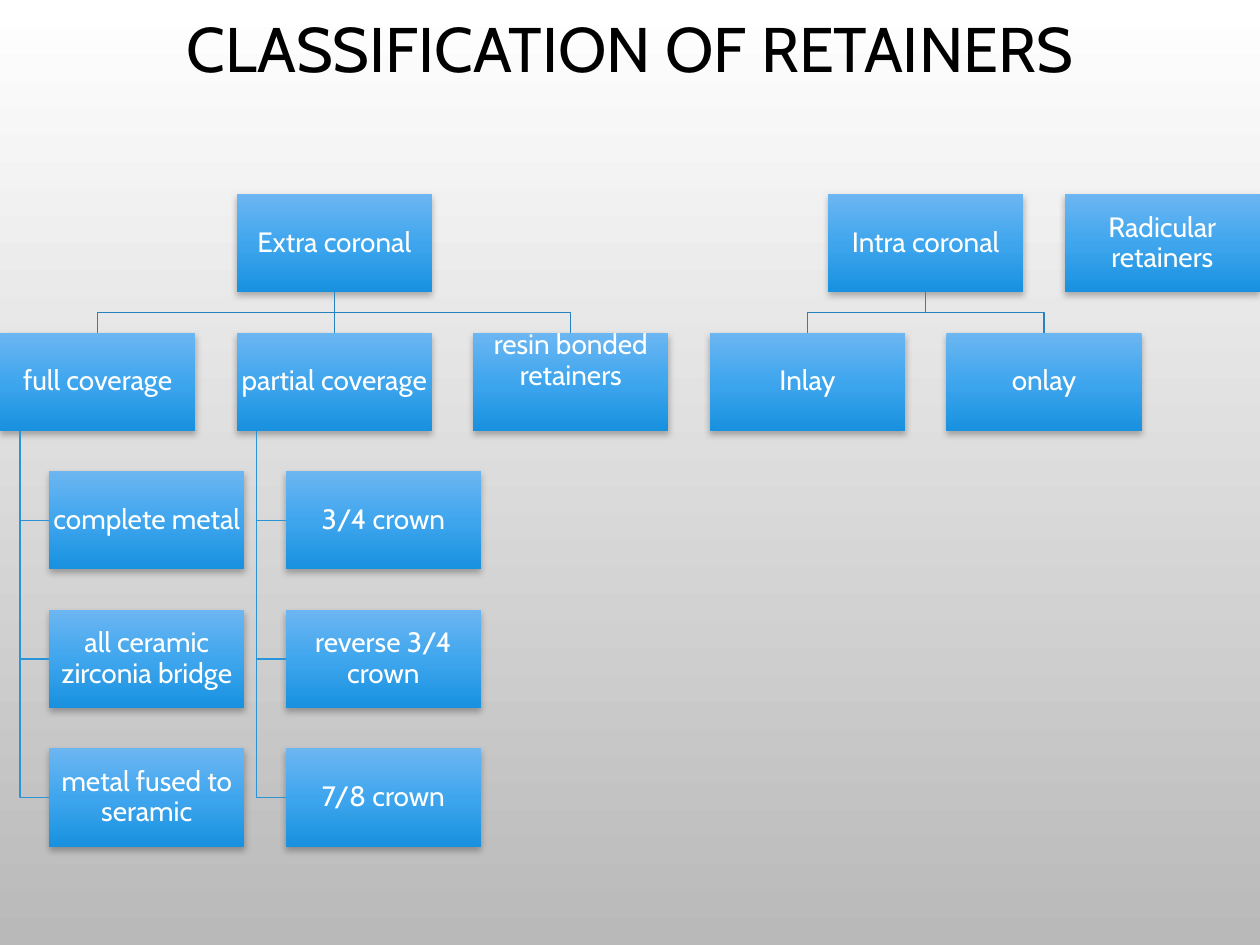
from copy import deepcopy
from lxml.etree import SubElement
from pptx import Presentation
from pptx.dml.color import RGBColor
from pptx.enum.shapes import MSO_CONNECTOR, MSO_SHAPE
from pptx.enum.text import MSO_ANCHOR, PP_ALIGN
from pptx.oxml.ns import qn
from pptx.util import Inches, Pt

BLACK = RGBColor(0, 0, 0)
WHITE = RGBColor(0xFF, 0xFF, 0xFF)
GRAY = RGBColor(0xB9, 0xB9, 0xB9)
BOX_COLORS = [RGBColor(0x6C, 0xB6, 0xF1), RGBColor(0x3F, 0xA6, 0xEE), RGBColor(0x18, 0x91, 0xDF)]
BRANCH_BLUE = RGBColor(0x26, 0x83, 0xBF)
LEAF_BLUE = RGBColor(0x2B, 0x94, 0xD8)

SLIDE_WIDTH, SLIDE_HEIGHT = 10, 7.5
BOX_WIDTH, BOX_HEIGHT = 1.55, 0.78
COLUMN_STEP = (SLIDE_WIDTH - BOX_WIDTH) / 4.5
TOP, ROW_STEP = 1.54, 1.1
LEAF_INDENT, TRUNK_INDENT = 0.39, 0.16

# Name: (column, row, indent, parent)
BOXES = {
    "Extra coronal": (1, 0, 0, None),
    "full coverage": (0, 1, 0, "Extra coronal"),
    "complete metal": (0, 2, LEAF_INDENT, "full coverage"),
    "all ceramic zirconia bridge": (0, 3, LEAF_INDENT, "full coverage"),
    "metal fused to seramic": (0, 4, LEAF_INDENT, "full coverage"),
    "partial coverage": (1, 1, 0, "Extra coronal"),
    "3/4 crown": (1, 2, LEAF_INDENT, "partial coverage"),
    "reverse 3/4 crown": (1, 3, LEAF_INDENT, "partial coverage"),
    "7/8 crown": (1, 4, LEAF_INDENT, "partial coverage"),
    "resin bonded retainers": (2, 1, 0, "Extra coronal"),
    "Intra coronal": (3.5, 0, 0, None),
    "Inlay": (3, 1, 0, "Intra coronal"),
    "onlay": (4, 1, 0, "Intra coronal"),
    "Radicular retainers": (4.5, 0, 0, None),
}


def write_text(shape, text, size, color, margin):
    frame = shape.text_frame
    frame_format = {"text": text, "word_wrap": True, "vertical_anchor": MSO_ANCHOR.MIDDLE}
    for side in ("left", "top", "right", "bottom"):
        frame_format[f"margin_{side}"] = Inches(margin)
    for name, value in frame_format.items():
        setattr(frame, name, value)
    paragraph = frame.paragraphs[0]
    paragraph.alignment = PP_ALIGN.CENTER
    paragraph.line_spacing = 0.9
    paragraph.font.color.rgb = color
    for name, value in {"name": "Cabin", "size": Pt(size)}.items():
        setattr(paragraph.font, name, value)


def fill_downward(fill, colors):
    """Blend evenly spaced colours from top to bottom."""
    fill.gradient()
    fill.gradient_angle = 270
    stop_list = fill.gradient_stops[0]._gs.getparent()
    for _ in colors[2:]:
        stop_list.append(deepcopy(stop_list[0]))
    for number, (stop, color) in enumerate(zip(fill.gradient_stops, colors)):
        stop.color.rgb = color
        stop.position = number / (len(colors) - 1)


presentation = Presentation()
presentation.slide_width = Inches(SLIDE_WIDTH)
presentation.slide_height = Inches(SLIDE_HEIGHT)
slide = presentation.slides.add_slide(presentation.slide_layouts[5])
fill_downward(slide.background.fill, [WHITE, GRAY])

title = slide.shapes.title
for name, value in {"left": 0.75, "top": -0.25, "width": 8.5, "height": 1.33}.items():
    setattr(title, name, Inches(value))
write_text(title, "CLASSIFICATION OF RETAINERS", 36, BLACK, 0.1)

boxes = {}
for text, (column, row, indent, parent) in BOXES.items():
    box = slide.shapes.add_shape(
        MSO_SHAPE.RECTANGLE,
        Inches(column * COLUMN_STEP + indent), Inches(TOP + row * ROW_STEP),
        Inches(BOX_WIDTH), Inches(BOX_HEIGHT),
    )
    fill_downward(box.fill, BOX_COLORS)
    box.line.fill.background()
    box.shadow.inherit = False
    effects = box._element.spPr.find(qn("a:effectLst"))
    shadow = SubElement(effects, qn("a:outerShdw"), blurRad=str(Pt(4)), dist=str(Pt(2)),
                        dir="5400000", rotWithShape="0")
    shadow_color = SubElement(shadow, qn("a:srgbClr"), val=str(BLACK))
    SubElement(shadow_color, qn("a:alpha"), val="28000")
    write_text(box, text, 16, WHITE, 0.01)
    boxes[text] = box

# This label sits in the upper part of its box
boxes["resin bonded retainers"].text_frame.margin_bottom = Inches(0.34)

for text, (column, row, indent, parent_name) in BOXES.items():
    if parent_name is None:
        continue
    box, parent = boxes[text], boxes[parent_name]
    parent_bottom = parent.top + parent.height
    parent_center = parent.left + parent.width // 2
    box_center = box.left + box.width // 2
    if box_center == parent_center:
        link = slide.shapes.add_connector(MSO_CONNECTOR.STRAIGHT, 0, 0, 0, 0)
        link.begin_connect(parent, 2)
        link.end_connect(box, 0)
        SubElement(link._element.spPr, qn("a:effectLst"))
    else:
        if indent:
            trunk = parent.left + Inches(TRUNK_INDENT)
            box_middle = box.top + box.height // 2
            points = [(trunk, parent_bottom), (trunk, box_middle), (box.left, box_middle)]
        else:
            bend = (parent_bottom + box.top) // 2
            points = [(parent_center, parent_bottom), (parent_center, bend),
                      (box_center, bend), (box_center, box.top)]
        builder = slide.shapes.build_freeform(*points[0])
        builder.add_line_segments(points[1:], close=False)
        link = builder.convert_to_shape()
        link.fill.background()
        link.shadow.inherit = False
    link.line.color.rgb = LEAF_BLUE if indent else BRANCH_BLUE
    link.line.width = Pt(0.75)

presentation.save("out.pptx")
